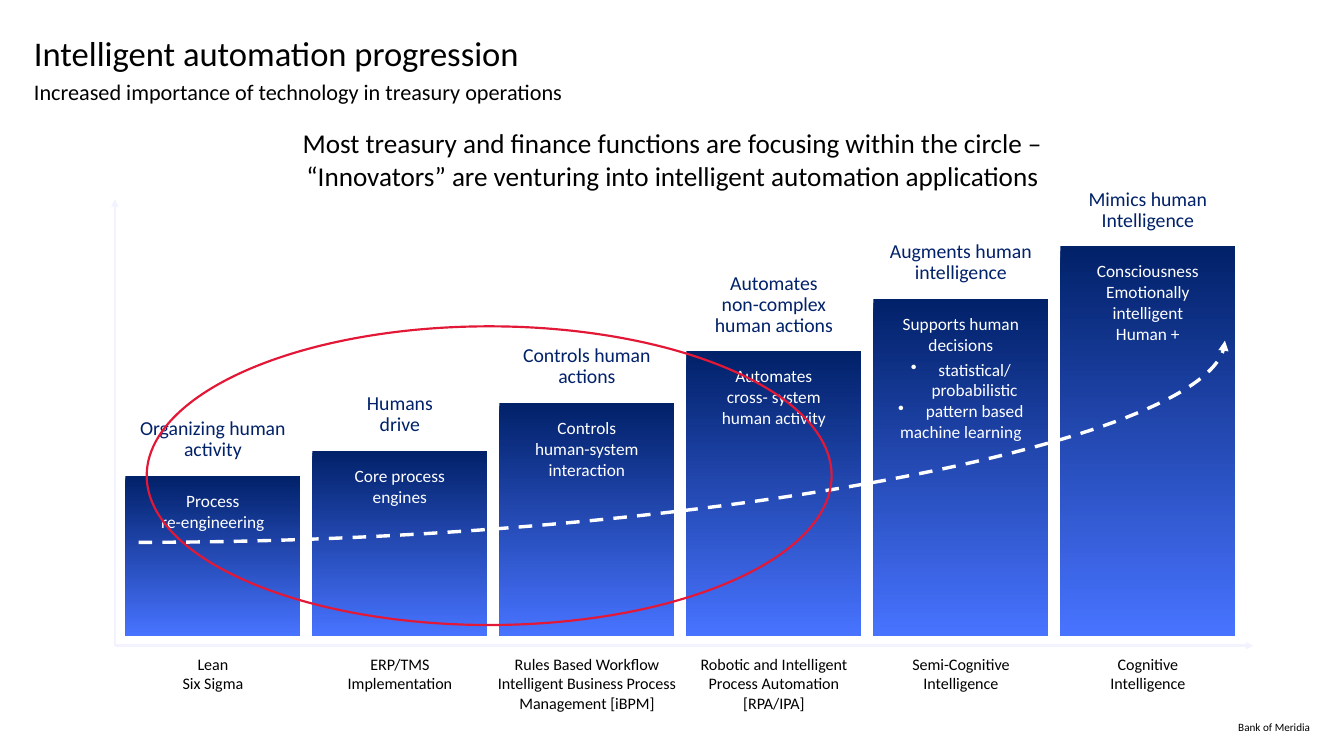
from dataclasses import dataclass

import pptx
import pptx.util
import pptx.dml.color
import pptx.enum.dml
import pptx.enum.shapes
import pptx.enum.text
import pptx.oxml.ns
from pptx.oxml import parse_xml

Cm, Pt = pptx.util.Cm, pptx.util.Pt
ALIGN = pptx.enum.text.PP_ALIGN
ANCHOR = pptx.enum.text.MSO_ANCHOR
CONNECTOR = pptx.enum.shapes.MSO_CONNECTOR
SHAPE = pptx.enum.shapes.MSO_SHAPE


def rgb(value):
    return pptx.dml.color.RGBColor.from_string(value)


@dataclass(frozen=True)
class Theme:
    font: str = "Calibri"
    black: str = "000000"
    white: str = "FFFFFF"
    navy: str = "012169"
    blue: str = "4873FF"
    red: str = "E31837"
    axis: str = "F2F3FF"
    title: int = 28
    headline: int = 22
    subtitle: int = 18
    heading: int = 16
    detail: int = 14
    caption: int = 13
    footer: int = 9


THEME = Theme()
BULLET = "• "

# Column geometry in centimetres
FIRST_LEFT, PITCH, BAR_WIDTH, BASELINE = 3.58, 5.34, 5, 18.16

# Stage: bar height, heading, details in the bar, caption under the axis
STAGES = [
    (4.57, ["Organizing human", "activity"],
     ["Process", "re-engineering"], ["Lean", "Six Sigma"]),
    (5.28, ["Humans\ndrive"],
     ["Core process", "engines"], ["ERP/TMS", "Implementation"]),
    (6.65, ["Controls human", "actions"],
     ["Controls", "human-system", "interaction"],
     ["Rules Based Workflow", "Intelligent Business Process", "Management [iBPM]"]),
    (8.13, ["Automates\nnon-complex", "human actions"],
     ["Automates", "cross- system", "human activity"],
     ["Robotic and Intelligent", "Process Automation\n[RPA/IPA]"]),
    (9.63, ["Augments human", "intelligence"],
     ["Supports human", "decisions", BULLET + "statistical/\nprobabilistic",
      BULLET + "pattern based", "machine learning"],
     ["Semi-Cognitive", "Intelligence"]),
    (11.13, ["Mimics human", "Intelligence"],
     ["Consciousness", "Emotionally intelligent", "Human +"],
     ["Cognitive", "Intelligence"]),
]


def set_bullet(paragraph):
    properties = paragraph._p.get_or_add_pPr()
    properties.set("marL", str(Cm(0.79)))
    properties.set("indent", str(-Cm(0.79)))
    properties.append(parse_xml(
        f'<a:buChar {pptx.oxml.ns.nsdecls("a")} char="{BULLET.strip()}"/>'))


def clear_bullet(paragraph):
    properties = paragraph._p.get_or_add_pPr()
    properties.set("marL", "0")
    properties.set("indent", "0")
    properties.append(parse_xml(f'<a:buNone {pptx.oxml.ns.nsdecls("a")}/>'))


def write(shape, lines, size, color, align=ALIGN.CENTER, anchor=ANCHOR.TOP,
          insets=(0, 0, 0, 0), wrap=True, spacing=None):
    """Fill a shape with paragraphs; insets are left, top, right, bottom in cm."""
    frame = shape.text_frame
    frame.word_wrap = wrap
    frame.auto_size = pptx.enum.text.MSO_AUTO_SIZE.NONE
    frame.vertical_anchor = anchor
    (frame.margin_left, frame.margin_top,
     frame.margin_right, frame.margin_bottom) = map(Cm, insets)
    after_bullet = False
    for number, line in enumerate(lines):
        paragraph = frame.paragraphs[0] if number == 0 else frame.add_paragraph()
        paragraph.text = line.removeprefix(BULLET)
        bulleted = line.startswith(BULLET)
        if bulleted:
            set_bullet(paragraph)
            if not after_bullet:
                paragraph.space_before = Pt(3.4)
        elif shape.is_placeholder:
            clear_bullet(paragraph)
            paragraph.space_before = Pt(0)
        after_bullet = bulleted
        paragraph.alignment = align
        if spacing:
            paragraph.line_spacing = Pt(spacing)
        paragraph.font.name = THEME.font
        paragraph.font.size = Pt(size)
        paragraph.font.color.rgb = rgb(color)


def place(shape, left, top, width, height):
    shape.left, shape.top = Cm(left), Cm(top)
    shape.width, shape.height = Cm(width), Cm(height)


def add_text(slide, box, lines, size, color, **layout):
    write(slide.shapes.add_textbox(*map(Cm, box)), lines, size, color, **layout)


def add_arrow(slide, kind, ends, color, width):
    arrow = slide.shapes.add_connector(kind, *map(Cm, ends))
    arrow.line.color.rgb = rgb(color)
    arrow.line.width = Pt(width)
    if kind == CONNECTOR.CURVE:
        arrow.line.dash_style = pptx.enum.dml.MSO_LINE.DASH
        # A single bend: level at the start, upright at the end
        arrow._element.spPr.prstGeom.set("prst", "curvedConnector2")
    namespace = pptx.oxml.ns.nsdecls("a")
    properties = arrow._element.spPr
    properties.find(pptx.oxml.ns.qn("a:ln")).append(
        parse_xml(f'<a:tailEnd {namespace} type="triangle"/>'))
    properties.append(parse_xml(f"<a:effectLst {namespace}/>"))


def add_bar(slide, box, details):
    bar = slide.shapes.add_shape(SHAPE.RECTANGLE, *map(Cm, box))
    bar.shadow.inherit = False
    bar.line.fill.background()
    bar.fill.gradient()
    bar.fill.gradient_angle = 270
    for stop, position, color in zip(bar.fill.gradient_stops, (0, 1),
                                     (THEME.navy, THEME.blue)):
        stop.position = position
        stop.color.rgb = rgb(color)
    write(bar, details, THEME.detail, THEME.white, insets=(0.41,) * 4)


def add_stage(slide, number, height, heading, details, caption):
    left = FIRST_LEFT + PITCH * number
    top = BASELINE - height
    add_bar(slide, (left, top, BAR_WIDTH, height), details)
    heading_lines = "\n".join(heading).count("\n") + 1
    heading_height = 0.43 + 0.6 * heading_lines
    add_text(slide, (left, top - heading_height, BAR_WIDTH, heading_height),
             heading, THEME.heading, THEME.navy,
             insets=(0, 0, 0, 0.41), wrap=False, spacing=17)
    caption_lines = "\n".join(caption).count("\n") + 1
    add_text(slide, (left, 18.49, BAR_WIDTH, 0.2 + 0.56 * caption_lines),
             caption, THEME.caption, THEME.black,
             insets=(0, 0.2, 0, 0), wrap=False)


def add_focus_circle(slide):
    circle = slide.shapes.add_shape(
        SHAPE.OVAL, Cm(4.19), Cm(9.32), Cm(19.56), Cm(8.53))
    circle.shadow.inherit = False
    circle.fill.background()
    circle.line.color.rgb = rgb(THEME.red)
    circle.line.width = Pt(1.75)


def main():
    deck = pptx.Presentation()
    deck.slide_width, deck.slide_height = Cm(38.38), Cm(21.59)
    slide = deck.slides.add_slide(deck.slide_layouts[1])

    # Title, subtitle and footer
    title, subtitle = slide.placeholders
    place(title, 0.97, 1.12, 36.4, 1.02)
    write(title, ["Intelligent automation progression"],
          THEME.title, THEME.black, align=ALIGN.LEFT, spacing=28)
    place(subtitle, 0.97, 2.36, 36.4, 0.66)
    write(subtitle, ["Increased importance of technology in treasury operations"],
          THEME.subtitle, THEME.black, align=ALIGN.LEFT,
          anchor=ANCHOR.MIDDLE, spacing=18)
    add_text(slide, (33.02, 20.57, 4.39, 0.38), ["Bank of Meridia"],
             THEME.footer, THEME.black, align=ALIGN.RIGHT, anchor=ANCHOR.MIDDLE)

    # Axes
    for end in ((35.79, 18.44), (3.28, 5.69)):
        add_arrow(slide, CONNECTOR.STRAIGHT, (3.28, 18.44, *end), THEME.axis, 2)

    # Stages, rising from left to right
    for number, stage in enumerate(STAGES):
        add_stage(slide, number, *stage)

    # Progress curve, headline and circle
    add_arrow(slide, CONNECTOR.CURVE, (3.96, 15.49, 34.98, 9.73), THEME.white, 2.75)
    add_text(slide, (8.15, 3.68, 22.1, 1.73),
             ["Most treasury and finance functions are focusing within the circle – "
              "“Innovators” are venturing into intelligent automation applications"],
             THEME.headline, THEME.black, anchor=ANCHOR.MIDDLE)
    add_focus_circle(slide)

    deck.save("out.pptx")


if __name__ == "__main__":
    main()
